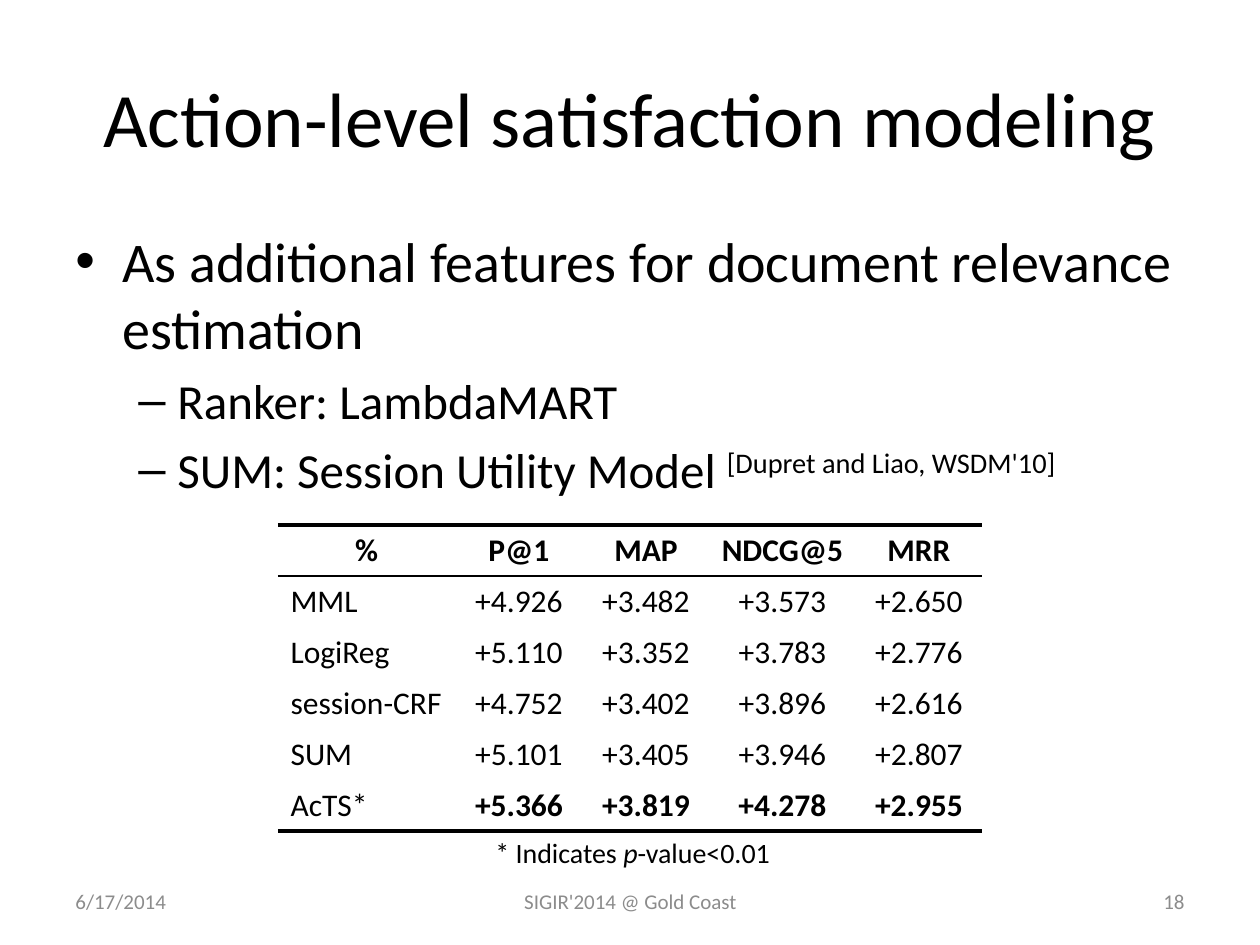
from dataclasses import dataclass
from lxml.etree import SubElement
from pptx import Presentation
from pptx.dml.color import RGBColor as Rgb
from pptx.enum.text import MSO_ANCHOR as Anchor, PP_ALIGN as Align
from pptx.oxml.ns import qn
from pptx.util import Pt


@dataclass(frozen=True)
class Theme:
    font: str = "Calibri"
    ink: str = "000000"
    gray: str = "8C8C8C"
    title: int = 44
    body: tuple = (32, 28)
    cell: int = 18
    note: int = 16
    foot: int = 12
    thick: float = 2.25
    thin: float = 1


# Content
TITLE = "Action-level satisfaction modeling"
POINTS = [  # level, then (text, style) runs
    (0, [("As additional features for document relevance estimation", "")]),
    (1, [("Ranker: LambdaMART", "")]),
    (1, [("SUM: Session Utility Model ", ""),
         ("[Dupret and Liao, WSDM'10]", "super")]),
]
LEVELS = [("•", 47, -47), ("–", 102, -39)]  # mark, margin, indent in px
GAINS = [
    ("%", "P@1", "MAP", "NDCG@5", "MRR"),
    ("MML", "+4.926", "+3.482", "+3.573", "+2.650"),
    ("LogiReg", "+5.110", "+3.352", "+3.783", "+2.776"),
    ("session-CRF", "+4.752", "+3.402", "+3.896", "+2.616"),
    ("SUM", "+5.101", "+3.405", "+3.946", "+2.807"),
    ("AcTS*", "+5.366", "+3.819", "+4.278", "+2.955"),
]
NOTE = [("* Indicates ", ""), ("p", "italic"), ("-value<0.01", "")]
FOOT = [  # text, left, width, align
    ("6/17/2014", 63, 294, Align.LEFT),
    ("SIGIR'2014 @ Gold Coast", 431, 399, Align.CENTER),
    ("18", 903, 294, Align.RIGHT),
]

# Layout in px
WIDE, HIGH = 1260, 945
COLS, ROW = (177, 128, 126, 147, 126), 51
NO_GRID = "{2D5ABB26-0587-4C30-8999-92F81FD0307C}"
T = Theme()


def px(n):
    return round(n * 914400 / 126)


def write(para, runs, size, color=T.ink, align=Align.LEFT):
    para.alignment = align
    for text, style in runs:
        run = para.add_run()
        run.text = text
        font = run.font
        font.name, font.size = T.font, Pt(size)
        font.color.rgb = Rgb.from_string(color)
        font.bold, font.italic = style == "bold", style == "italic"
        if style == "super":
            font._element.set("baseline", "30000")


def add_box(slide, left, top, width, height, anchor=Anchor.TOP):
    box = slide.shapes.add_textbox(px(left), px(top), px(width), px(height))
    frame = box.text_frame
    frame.word_wrap, frame.vertical_anchor = True, anchor
    return frame


def set_list(para, level):
    mark, left, indent = LEVELS[level]
    para.level = level
    props = para._p.get_or_add_pPr()
    props.set("marL", str(px(left)))
    props.set("indent", str(px(indent)))
    space = SubElement(props, qn("a:spcBef"))
    SubElement(space, qn("a:spcPct"), val="20000")
    SubElement(props, qn("a:buFont"), typeface="Arial")
    SubElement(props, qn("a:buChar"), char=mark)


def add_rule(cell, side, width):
    line = SubElement(cell._tc.get_or_add_tcPr(), qn("a:" + side),
                      w=str(Pt(width)))
    fill = SubElement(line, qn("a:solidFill"))
    SubElement(fill, qn("a:srgbClr"), val=T.ink)


def add_gains(slide, top):
    wide, last = sum(COLS), len(GAINS) - 1
    table = slide.shapes.add_table(
        len(GAINS), len(COLS), px((WIDE - wide) / 2), px(top),
        px(wide), px(ROW * len(GAINS))).table
    table.first_row = table.horz_banding = False
    table._tbl.tblPr.find(qn("a:tableStyleId")).text = NO_GRID
    for col, width in zip(table.columns, COLS):
        col.width = px(width)
    for r, row in enumerate(GAINS):
        table.rows[r].height = px(ROW)
        for c, text in enumerate(row):
            cell = table.cell(r, c)
            cell.vertical_anchor = Anchor.MIDDLE
            bold = r == 0 or (r == last and c > 0)
            align = Align.LEFT if r and c == 0 else Align.CENTER
            write(cell.text_frame.paragraphs[0],
                  [(text, "bold" if bold else "")], T.cell, align=align)
            # Rules come before the fill in the cell's properties
            if r == 0:
                add_rule(cell, "lnT", T.thick)
                add_rule(cell, "lnB", T.thin)
            elif r == last:
                add_rule(cell, "lnB", T.thick)
            cell.fill.background()


def main():
    deck = Presentation()
    deck.slide_width, deck.slide_height = px(WIDE), px(HIGH)
    slide = deck.slides.add_slide(deck.slide_layouts[6])

    # Title
    frame = add_box(slide, 63, 38, 1134, 157, Anchor.MIDDLE)
    write(frame.paragraphs[0], [(TITLE, "")], T.title, align=Align.CENTER)

    # Bullet points
    frame = add_box(slide, 63, 220, 1134, 662)
    for i, (level, runs) in enumerate(POINTS):
        para = frame.add_paragraph() if i else frame.paragraphs[0]
        set_list(para, level)
        write(para, runs, T.body[level])

    # Table and its note
    add_gains(slide, 525)
    frame = add_box(slide, 483, 829, 373, 47)
    write(frame.paragraphs[0], NOTE, T.note)

    # Footer
    for text, left, width, align in FOOT:
        frame = add_box(slide, left, 876, width, 50, Anchor.MIDDLE)
        write(frame.paragraphs[0], [(text, "")], T.foot, T.gray, align)

    deck.save("out.pptx")


if __name__ == "__main__":
    main()
